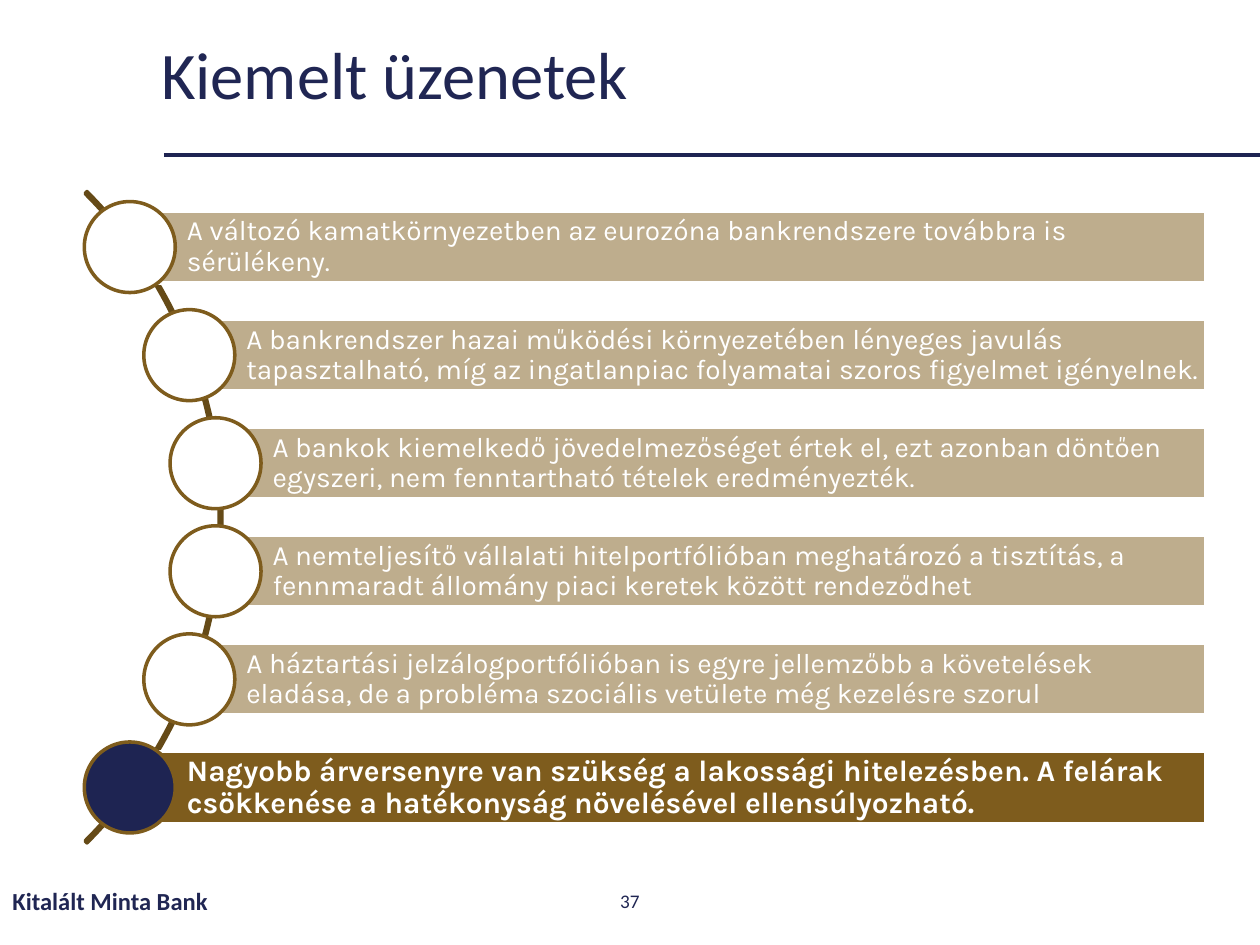
import pptx
import pptx.util
import pptx.dml.color
import pptx.enum.shapes
import pptx.enum.text
import pptx.oxml.ns
import lxml.etree

Pt = pptx.util.Pt
SHAPE = pptx.enum.shapes.MSO_SHAPE
ALIGN = pptx.enum.text.PP_ALIGN
COLORS = {"title": "202653", "navy": "1E2452", "gold": "7E5C1D", "arc": "654A17", "white": "FFFFFF"}
MESSAGES = [
    "A változó kamatkörnyezetben az eurozóna bankrendszere továbbra is sérülékeny.",
    "A bankrendszer hazai működési környezetében lényeges javulás tapasztalható, "
    "míg az ingatlanpiac folyamatai szoros figyelmet igényelnek.",
    "A bankok kiemelkedő jövedelmezőséget értek el, ezt azonban döntően egyszeri, "
    "nem fenntartható tételek eredményezték.",
    "A nemteljesítő vállalati hitelportfólióban meghatározó a tisztítás, "
    "a fennmaradt állomány piaci keretek között rendeződhet",
    "A háztartási jelzálogportfólióban is egyre jellemzőbb a követelések eladása, "
    "de a probléma szociális vetülete még kezelésre szorul",
    "Nagyobb árversenyre van szükség a lakossági hitelezésben. "
    "A felárak csökkenése a hatékonyság növelésével ellensúlyozható.",
]


def rgb(name):
    """Return the named colour."""
    return pptx.dml.color.RGBColor.from_string(COLORS[name])


def write(sp, text, color, font, align=ALIGN.LEFT, spacing=1.0):
    """Write one formatted paragraph, centred vertically in its shape."""
    tf = sp.text_frame
    tf.word_wrap = True
    tf.vertical_anchor = pptx.enum.text.MSO_ANCHOR.MIDDLE
    p = tf.paragraphs[0]
    p.alignment, p.line_spacing = align, spacing
    r = p.add_run()
    r.text = text
    r.font.color.rgb = rgb(color)
    for name, value in font.items():
        setattr(r.font, name, value)


def add_label(s, box, text, **style):
    """Add a text box with one paragraph."""
    write(s.shapes.add_textbox(*map(Pt, box)), text, "title", **style)


def add_outlined(s, kind, box, line, fill=None, alpha=None):
    """Add a preset shape with a 2 pt outline and an optional fill."""
    sp = s.shapes.add_shape(kind, *map(Pt, box))
    sp.shadow.inherit = False
    sp.line.color.rgb, sp.line.width = rgb(line), Pt(2)
    if fill is None:
        sp.fill.background()
        return sp
    sp.fill.solid()
    sp.fill.fore_color.rgb = rgb(fill)
    if alpha is not None:
        qn = pptx.oxml.ns.qn
        clr = sp.fill._xPr.find(qn("a:solidFill")).find(qn("a:srgbClr"))
        lxml.etree.SubElement(clr, qn("a:alpha")).set("val", str(alpha * 1000))
    return sp


def add_header(s, x, y, w, h):
    """Place the title and the rule that runs to the right edge."""
    line_y = Pt(y + h)
    rule = s.shapes.add_connector(
        pptx.enum.shapes.MSO_CONNECTOR.STRAIGHT, Pt(x + 8.6), line_y, Pt(x + w), line_y)
    rule.line.color.rgb, rule.line.width = rgb("navy"), Pt(2.25)
    lxml.etree.SubElement(rule._element.spPr, pptx.oxml.ns.qn("a:effectLst"))
    add_label(s, (x, y, 590, 60), "Kiemelt üzenetek",
              font={"name": "Calibri", "size": Pt(38)}, spacing=0.9)


def add_messages(s, x, y, w, h):
    """Place the arc and the message bars with their circles along it."""
    circle, bar_h, radius = 52, 41, 263.2
    pitch = (h - circle) / (len(MESSAGES) - 1)
    arc = add_outlined(s, SHAPE.BLOCK_ARC,
                       (x - 447.8, y + h / 2 - radius, 2 * radius, 2 * radius), "arc")
    for i, value in enumerate((189, 27, 0.003)):
        arc.adjustments[i] = value
    indents = (0, 34, 49, 49, 34, 0)
    for i, (text, indent) in enumerate(zip(MESSAGES, indents)):
        last = i == len(MESSAGES) - 1
        left, top = x + indent, y + i * pitch
        middle = left + circle / 2
        bar = add_outlined(s, SHAPE.RECTANGLE,
                           (middle, top + (circle - bar_h) / 2, x + w - middle, bar_h),
                           "white", "gold", None if last else 50)
        insets = {"margin_left": 32.6, "margin_top": 3, "margin_right": 3, "margin_bottom": 3}
        for name, value in insets.items():
            setattr(bar.text_frame, name, Pt(value))
        write(bar, text, "white",
              {"name": "Karla", "size": Pt(17 if last else 16), "bold": last}, spacing=0.9)
        add_outlined(s, SHAPE.OVAL, (left, top, circle, circle), "gold",
                     "navy" if last else "white")


def add_footer(s, x, y, w, h):
    """Place the organisation name and the centred page number."""
    add_label(s, (x, y, 243, h), "Kitalált Minta Bank",
              font={"name": "Calibri", "size": Pt(14), "bold": True})
    add_label(s, (x + (w - 162) / 2, y, 162, h), "37",
              font={"name": "Calibri", "size": Pt(11)}, align=ALIGN.CENTER)


def main():
    """Build the slide and save it."""
    prs = pptx.Presentation()
    prs.slide_width, prs.slide_height = Pt(720), Pt(540)
    s = prs.slides.add_slide(prs.slide_layouts[6])
    add_header(s, 85, 14.4, 635, 74)
    add_messages(s, 48.2, 115.2, 640.8, 360.8)
    add_footer(s, 0, 500.4, 720, 29)
    prs.save("out.pptx")


if __name__ == "__main__":
    main()
